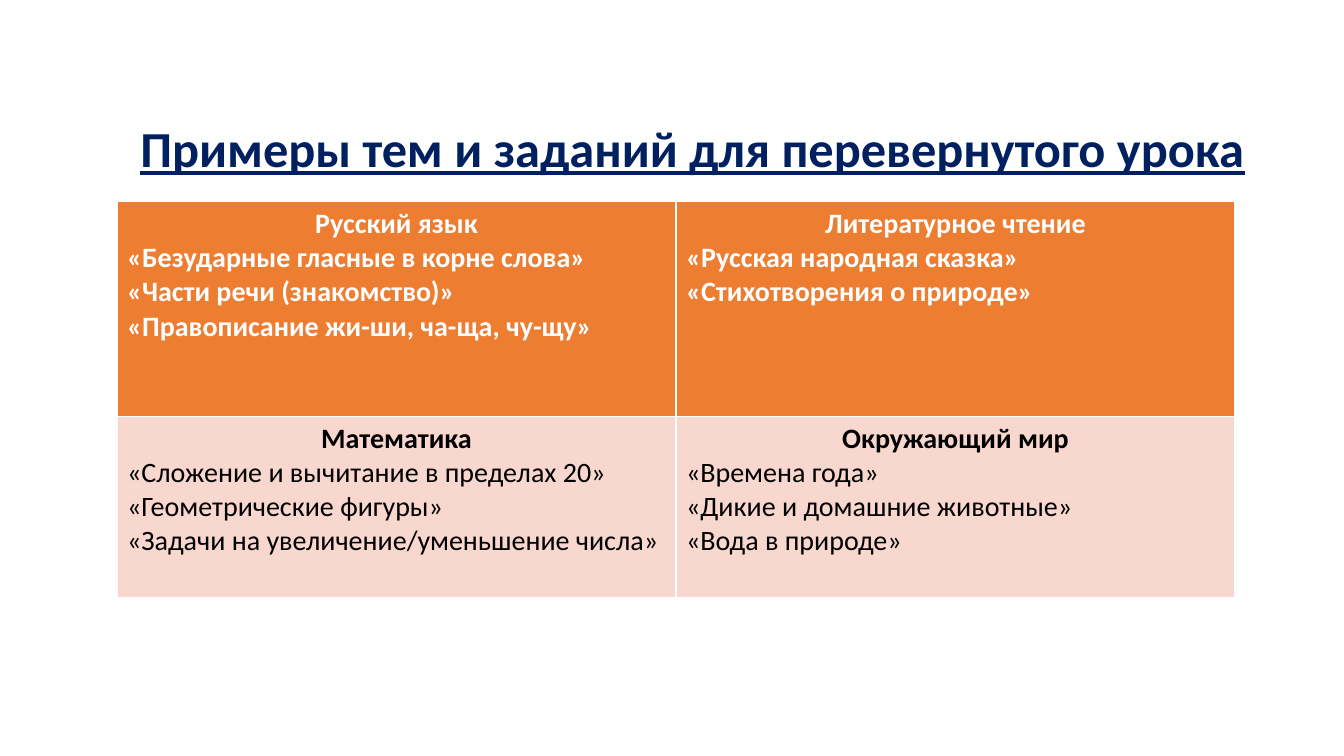
from pptx import Presentation
from pptx.dml.color import RGBColor
from pptx.enum.text import MSO_ANCHOR, PP_ALIGN
from pptx.util import Inches, Pt

CENTER, LEFT = PP_ALIGN.CENTER, PP_ALIGN.LEFT
MIDDLE = MSO_ANCHOR.MIDDLE
TITLE_ONLY = 5
FONT = "Calibri"

TITLE = "Примеры тем и заданий для перевернутого урока"

# Each subject: heading and its lesson topics
SUBJECT_ROWS = [
    [
        ("Русский язык", ["«Безударные гласные в корне слова»",
                          "«Части речи (знакомство)»",
                          "«Правописание жи-ши, ча-ща, чу-щу»"]),
        ("Литературное чтение", ["«Русская народная сказка»",
                                 "«Стихотворения о природе»"]),
    ],
    [
        ("Математика", ["«Сложение и вычитание в пределах 20»",
                        "«Геометрические фигуры»",
                        "«Задачи на увеличение/уменьшение числа»"]),
        ("Окружающий мир", ["«Времена года»",
                            "«Дикие и домашние животные»",
                            "«Вода в природе»"]),
    ],
]

# Each row: height in inches, fill, text colour, bold topics
ROW_STYLES = [(2.13, "ED7D31", "FFFFFF", True),
              (1.8, "F8D7CE", "000000", False)]


def color(hex_code):
    return RGBColor.from_string(hex_code)


def add_span(para, text, size, hex_code, bold, underline=None):
    span = para.add_run()
    span.text = text
    font = span.font
    font.name, font.size = FONT, Pt(size)
    font.bold, font.underline = bold, underline
    font.color.rgb = color(hex_code)


def add_title(page):
    box = page.shapes.title
    box.left, box.top = Inches(0.7), Inches(1.01)
    box.width, box.height = Inches(12.34), Inches(0.99)
    box.text_frame.word_wrap = True
    box.text_frame.vertical_anchor = MIDDLE
    para = box.text_frame.paragraphs[0]
    para.alignment = CENTER
    para.line_spacing = 0.9
    add_span(para, TITLE, 36, "002060", True, True)


def fill_subject(cell, subject, fill, text_color, bold_topics):
    cell.fill.solid()
    cell.fill.fore_color.rgb = color(fill)
    heading, topics = subject
    para = cell.text_frame.paragraphs[0]
    para.alignment = CENTER
    add_span(para, heading, 20, text_color, True)
    for topic in topics:
        para = cell.text_frame.add_paragraph()
        para.alignment = LEFT
        add_span(para, topic, 20, text_color, bold_topics)


def add_subject_table(page):
    height = sum(style[0] for style in ROW_STYLES)
    table = page.shapes.add_table(
        len(SUBJECT_ROWS), len(SUBJECT_ROWS[0]),
        Inches(1.16), Inches(2), Inches(11.09), Inches(height)).table
    for row, (subjects, style) in enumerate(zip(SUBJECT_ROWS, ROW_STYLES)):
        row_height, *look = style
        table.rows[row].height = Inches(row_height)
        for column, subject in enumerate(subjects):
            fill_subject(table.cell(row, column), subject, *look)


def main():
    deck = Presentation()
    deck.slide_width, deck.slide_height = Inches(13.33), Inches(7.5)
    page = deck.slides.add_slide(deck.slide_layouts[TITLE_ONLY])
    add_title(page)
    add_subject_table(page)
    deck.save("out.pptx")


if __name__ == "__main__":
    main()
